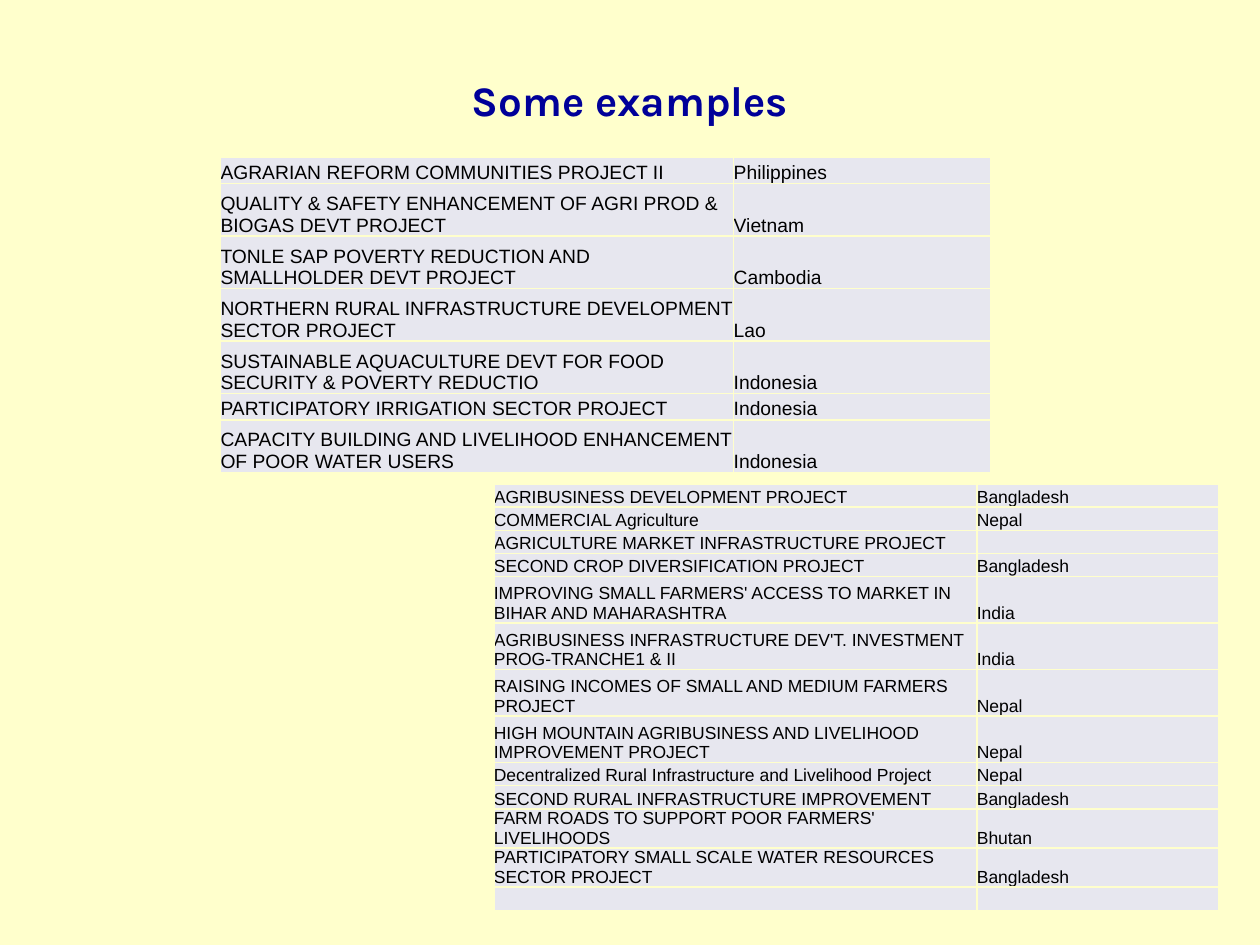
from lxml.etree import SubElement
from pptx import Presentation
from pptx.dml.color import RGBColor
from pptx.enum.text import MSO_ANCHOR, PP_ALIGN
from pptx.oxml import parse_xml
from pptx.oxml.ns import nsdecls, qn
from pptx.util import Inches, Pt

BACKGROUND = "FFFFCC"
CELL_FILL = "E7E7EF"
TITLE_COLOR = "000099"
TEXT_COLOR = "000000"
SINGLE, TIGHT, DOUBLE = 1, 1.67, 2
NAME_SHARE = 2 / 3

SOUTHEAST_ASIA = [
    ("AGRARIAN REFORM COMMUNITIES PROJECT II", "Philippines", SINGLE),
    ("QUALITY & SAFETY ENHANCEMENT OF AGRI PROD & BIOGAS DEVT PROJECT", "Vietnam", DOUBLE),
    ("TONLE SAP POVERTY REDUCTION AND SMALLHOLDER DEVT PROJECT", "Cambodia", DOUBLE),
    ("NORTHERN RURAL INFRASTRUCTURE DEVELOPMENT SECTOR PROJECT", "Lao", DOUBLE),
    ("SUSTAINABLE AQUACULTURE DEVT FOR FOOD SECURITY & POVERTY REDUCTIO", "Indonesia", DOUBLE),
    ("PARTICIPATORY IRRIGATION SECTOR PROJECT", "Indonesia", SINGLE),
    ("CAPACITY BUILDING AND LIVELIHOOD ENHANCEMENT OF POOR WATER USERS", "Indonesia", DOUBLE),
]

SOUTH_ASIA = [
    ("AGRIBUSINESS DEVELOPMENT PROJECT", "Bangladesh", SINGLE),
    ("COMMERCIAL Agriculture", "Nepal", SINGLE),
    ("AGRICULTURE MARKET INFRASTRUCTURE PROJECT", "", SINGLE),
    ("SECOND CROP DIVERSIFICATION PROJECT", "Bangladesh", SINGLE),
    ("IMPROVING SMALL FARMERS' ACCESS TO MARKET IN BIHAR AND MAHARASHTRA", "India", DOUBLE),
    ("AGRIBUSINESS INFRASTRUCTURE DEV'T. INVESTMENT PROG-TRANCHE1 & II", "India", DOUBLE),
    ("RAISING INCOMES OF SMALL AND MEDIUM FARMERS PROJECT", "Nepal", DOUBLE),
    ("HIGH MOUNTAIN AGRIBUSINESS AND LIVELIHOOD IMPROVEMENT PROJECT", "Nepal", DOUBLE),
    ("Decentralized Rural Infrastructure and Livelihood Project", "Nepal", SINGLE),
    ("SECOND RURAL INFRASTRUCTURE IMPROVEMENT", "Bangladesh", SINGLE),
    ("FARM ROADS TO SUPPORT POOR FARMERS' LIVELIHOODS", "Bhutan", TIGHT),
    ("PARTICIPATORY SMALL SCALE WATER RESOURCES SECTOR PROJECT", "Bangladesh", TIGHT),
    ("", "", SINGLE),
]


def color(value):
    return RGBColor.from_string(value)


def paint(fill, value):
    fill.solid()
    fill.fore_color.rgb = color(value)


def add_run(paragraph, text, font_name, size, value, bold=False):
    run = paragraph.add_run()
    run.text = text
    run.font.name = font_name
    run.font.size = Pt(size)
    run.font.bold = bold
    run.font.color.rgb = color(value)


def set_margins(target):
    target.margin_left = target.margin_right = 0
    target.margin_top = target.margin_bottom = 0


def add_borders(cell):
    properties = cell._tc.get_or_add_tcPr()
    for position, side in enumerate(("lnL", "lnR", "lnT", "lnB")):
        properties.insert(position, parse_xml(
            f'<a:{side} {nsdecls("a")} w="{Pt(1)}"><a:solidFill>'
            f'<a:srgbClr val="{BACKGROUND}"/></a:solidFill></a:{side}>'))


def fill_cell(cell, text, size):
    set_margins(cell)
    cell.vertical_anchor = MSO_ANCHOR.BOTTOM
    paint(cell.fill, CELL_FILL)
    add_borders(cell)
    paragraph = cell.text_frame.paragraphs[0]
    if text:
        add_run(paragraph, text, "Arial", size, TEXT_COLOR)
    else:
        SubElement(paragraph._p, qn("a:endParaRPr"), sz=str(size * 100))


def add_project_table(slide, left, top, width, height, projects, size):
    frame = slide.shapes.add_table(
        len(projects), 2, Inches(left), Inches(top), Inches(width), Inches(height))
    table = frame.table
    table.first_row = table.horz_banding = False
    table.columns[0].width = Inches(width * NAME_SHARE)
    table.columns[1].width = Inches(width * (1 - NAME_SHARE))
    unit = height / sum(lines for _, _, lines in projects)
    for row, (name, country, lines) in zip(table.rows, projects):
        row.height = Inches(unit * lines)
        for cell, text in zip(row.cells, (name, country)):
            fill_cell(cell, text, size)


def format_title(slide, text):
    title = slide.shapes.title
    title.left, title.top = Inches(0.75), Inches(0.5)
    title.width, title.height = Inches(8.5), Inches(0.59)
    title.text_frame.vertical_anchor = MSO_ANCHOR.MIDDLE
    paragraph = title.text_frame.paragraphs[0]
    paragraph.alignment = PP_ALIGN.CENTER
    add_run(paragraph, text, "Karla", 24, TITLE_COLOR, bold=True)


def main():
    presentation = Presentation()
    presentation.slide_width = Inches(10)
    presentation.slide_height = Inches(7.5)
    slide = presentation.slides.add_slide(presentation.slide_layouts[5])
    paint(slide.background.fill, BACKGROUND)
    format_title(slide, "Some examples")
    add_project_table(slide, 1.75, 1.25, 6.11, 2.5, SOUTHEAST_ASIA, 11)
    add_project_table(slide, 3.92, 3.84, 5.75, 3.38, SOUTH_ASIA, 10)
    presentation.save("out.pptx")


if __name__ == "__main__":
    main()
